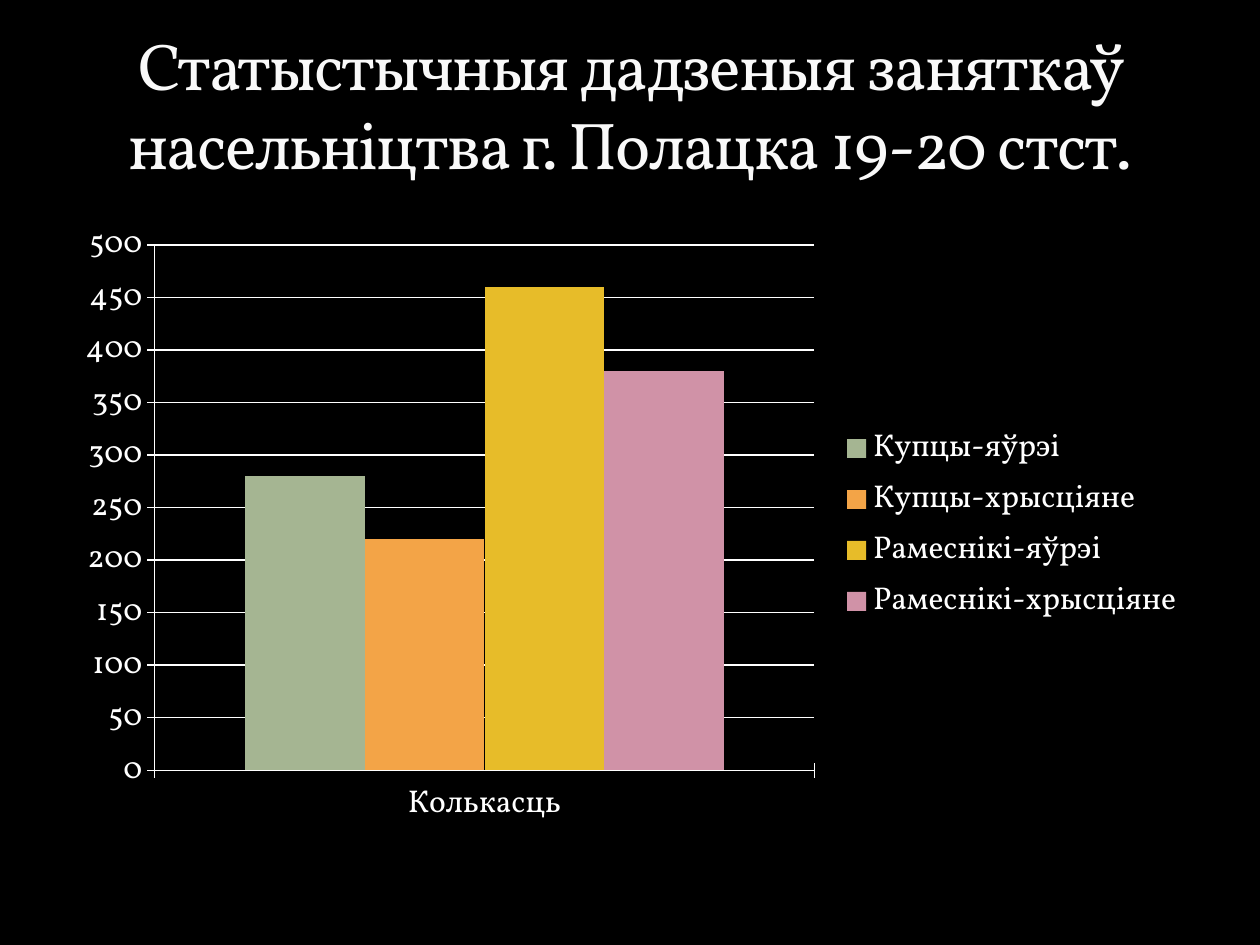
from dataclasses import dataclass

from lxml import etree
from pptx import Presentation
from pptx.chart.data import CategoryChartData
from pptx.dml.color import RGBColor
from pptx.enum.chart import XL_CHART_TYPE, XL_LEGEND_POSITION, XL_TICK_MARK
from pptx.enum.text import MSO_ANCHOR, PP_ALIGN
from pptx.oxml import parse_xml
from pptx.util import Pt

COLUMN = XL_CHART_TYPE.COLUMN_CLUSTERED
RIGHT = XL_LEGEND_POSITION.RIGHT
CROSS = XL_TICK_MARK.CROSS
NONE = XL_TICK_MARK.NONE
BOTTOM = MSO_ANCHOR.BOTTOM
CENTER = PP_ALIGN.CENTER
SPACE = "http://schemas.openxmlformats.org/drawingml/2006/main"

TITLE = "Статыстычныя дадзеныя заняткаў насельніцтва г. Полацка 19-20 стст."
GROUP = "Колькасць"
JOBS = [
    ("Купцы-яўрэі", 280, "A5B592"),
    ("Купцы-хрысціяне", 220, "F3A447"),
    ("Рамеснікі-яўрэі", 460, "E7BC29"),
    ("Рамеснікі-хрысціяне", 380, "D092A7"),
]


@dataclass(frozen=True)
class Theme:
    font: str = "Vollkorn"
    back: str = "000000"
    ink: str = "FFFFFF"
    head: str = "F9F9F9"
    edge: str = "3C4422"
    title: float = 37.8
    label: float = 18
    line: float = 0.75


class Deck:
    """Holds the theme and the current slide, and draws each element."""

    def __init__(self, theme):
        self.theme = theme
        self.file = Presentation()
        self.file.slide_width, self.file.slide_height = Pt(720), Pt(540)
        self.slide = self.file.slides.add_slide(self.file.slide_layouts[6])
        self.paint(self.slide.background.fill, theme.back)

    def paint(self, fill, color):
        fill.solid()
        fill.fore_color.rgb = RGBColor.from_string(color)

    def style(self, font, size, color):
        font.name = self.theme.font
        font.size = Pt(size)
        font.color.rgb = RGBColor.from_string(color)

    def stroke(self, line):
        self.paint(line.fill, self.theme.ink)
        line.width = Pt(self.theme.line)

    def title(self, text, box):
        frame = self.slide.shapes.add_textbox(*map(Pt, box)).text_frame
        frame.word_wrap = True
        frame.vertical_anchor = BOTTOM
        frame.text = text
        para = frame.paragraphs[0]
        para.alignment = CENTER
        run = para.runs[0]
        self.style(run.font, self.theme.title, self.theme.head)
        props = run.font.fill._xPr
        props.set("spc", "-100")
        edge = parse_xml(
            f'<a:ln xmlns:a="{SPACE}" w="3175"><a:solidFill>'
            f'<a:srgbClr val="{self.theme.edge}"/></a:solidFill></a:ln>'
        )
        alpha = etree.SubElement(edge[0][0], f"{{{SPACE}}}alpha")
        alpha.set("val", "25000")
        props.insert(0, edge)

    def chart(self, group, rows, box):
        data = CategoryChartData()
        data.categories = [group]
        for name, value, _ in rows:
            data.add_series(name, [value])
        chart = self.slide.shapes.add_chart(COLUMN, *map(Pt, box), data).chart
        self.style(chart.font, self.theme.label, self.theme.ink)
        chart.has_title = False
        chart.has_legend = True
        chart.legend.position = RIGHT
        chart.legend.include_in_layout = False
        plot = chart.plots[0]
        plot.vary_by_categories = False
        plot.gap_width = 150
        plot.overlap = 0
        for series, (_, _, color) in zip(plot.series, rows):
            self.paint(series.format.fill, color)
        for axis in (chart.category_axis, chart.value_axis):
            axis.major_tick_mark = CROSS
            axis.minor_tick_mark = NONE
            self.stroke(axis.format.line)
        scale = chart.value_axis
        scale.minimum_scale, scale.maximum_scale = 0, 500
        scale.major_unit = 50
        scale.has_major_gridlines = True
        self.stroke(scale.major_gridlines.format.line)

    def save(self):
        self.file.save("out.pptx")


def main():
    deck = Deck(Theme())
    deck.chart(GROUP, JOBS, (36, 120, 648, 360))
    deck.title(TITLE, (36, 12, 648, 96))
    deck.save()


if __name__ == "__main__":
    main()
